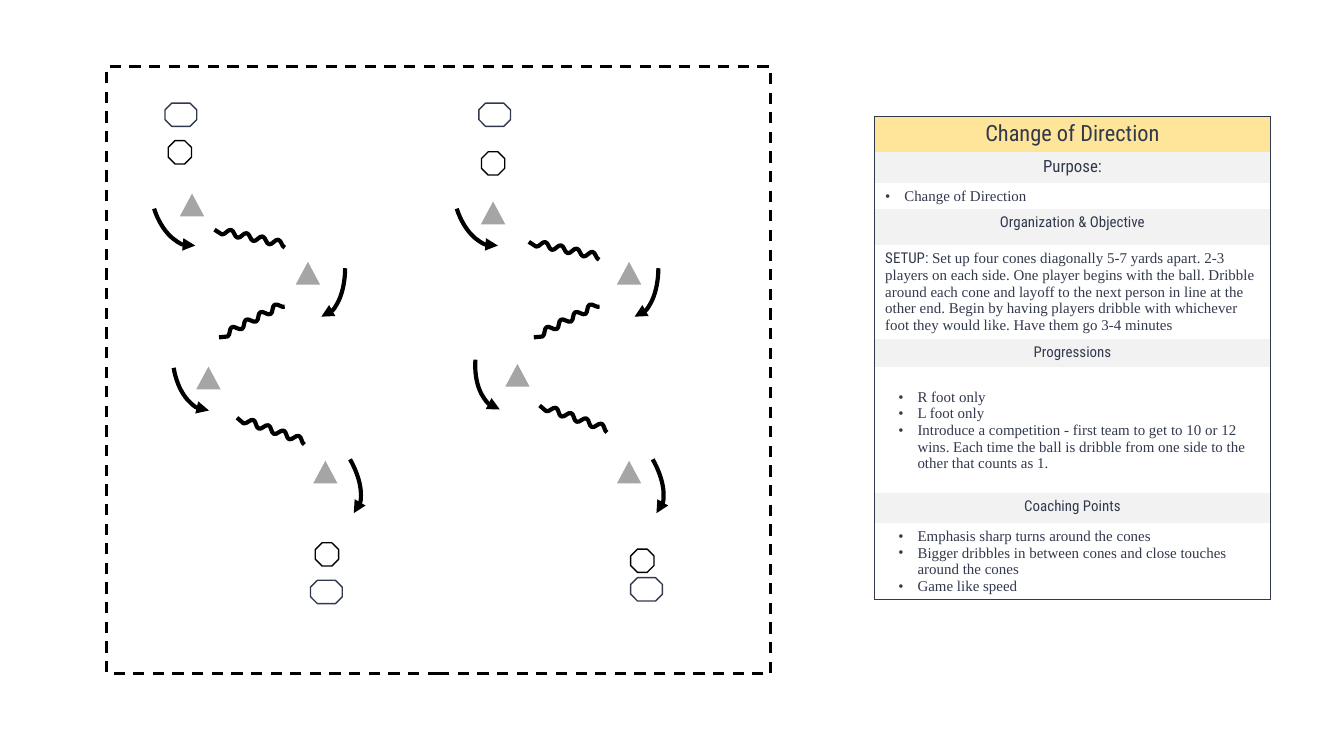
from math import cos, pi

from lxml.etree import SubElement
from pptx import Presentation
from pptx.dml.color import RGBColor
from pptx.enum.dml import MSO_LINE
from pptx.enum.shapes import MSO_SHAPE
from pptx.enum.text import MSO_ANCHOR, PP_ALIGN
from pptx.oxml.ns import qn
from pptx.util import Cm, Pt

BLACK = RGBColor(0x00, 0x00, 0x00)
WHITE = RGBColor(0xFF, 0xFF, 0xFF)
NAVY = RGBColor(0x31, 0x39, 0x4D)
INK = RGBColor(0x32, 0x39, 0x4D)
GRAY = RGBColor(0xA5, 0xA5, 0xA5)
PALE = RGBColor(0xF2, 0xF2, 0xF2)
GOLD = RGBColor(0xFF, 0xE5, 0x99)
HEAD, BODY = "Roboto Condensed", "Times New Roman"

deck = Presentation()
deck.slide_width, deck.slide_height = Cm(25.4), Cm(14.29)
slide = deck.slides.add_slide(deck.slide_layouts[6])
shapes = slide.shapes


def paint(shape, fill, line, width=0.75):
    shape.shadow.inherit = False
    if fill is None:
        shape.fill.background()
    else:
        shape.fill.solid()
        shape.fill.fore_color.rgb = fill
    if line is None:
        shape.line.fill.background()
    else:
        shape.line.color.rgb = line
        shape.line.width = Pt(width)


def place(kind, x, y, w, h, fill, line, width=0.75):
    shape = shapes.add_shape(kind, Cm(x), Cm(y), Cm(w), Cm(h))
    paint(shape, fill, line, width)
    return shape


# Field
field = place(MSO_SHAPE.RECTANGLE, 2.02, 1.26, 12.55, 11.48, None, BLACK, 1.5)
field.line.dash_style = MSO_LINE.DASH

# Session table: kind of row, height, paragraphs
rows = [
    ("title", 0.68, ["Change of Direction"]),
    ("purpose", 0.58, ["Purpose:"]),
    ("first", 0.49, ["Change of Direction"]),
    ("head", 0.68, ["Organization & Objective"]),
    ("text", 1.78, [
        "Set up four cones diagonally 5-7 yards apart. 2-3 players on each "
        "side. One player begins with the ball. Dribble around each cone and "
        "layoff to the next person in line at the other end. Begin by having "
        "players dribble with whichever foot they would like. Have them go "
        "3-4 minutes"]),
    ("head", 0.53, ["Progressions"]),
    ("list", 2.38, [
        "R foot only",
        "L foot only",
        "Introduce a competition - first team to get to 10 or 12 wins. Each "
        "time the ball is dribble from one side to the other that counts as 1."]),
    ("head", 0.57, ["Coaching Points"]),
    ("list", 1.44, [
        "Emphasis sharp turns around the cones",
        "Bigger dribbles in between cones and close touches around the cones",
        "Game like speed"]),
]
sizes = {"title": 12, "purpose": 9}
fills = {"title": GOLD, "purpose": PALE, "head": PALE}
indents = {"first": 0.36, "list": 0.61}
frame = shapes.add_table(len(rows), 1, Cm(16.53), Cm(2.2), Cm(7.48), Cm(9.13))
table = frame.table
table.first_row = table.horz_banding = False

for i, (kind, height, lines) in enumerate(rows):
    table.rows[i].height = Cm(height)
    cell = table.cell(i, 0)
    cell.margin_left = cell.margin_right = Cm(0.2)
    cell.margin_top = cell.margin_bottom = Cm(0.09)
    cell.vertical_anchor = MSO_ANCHOR.TOP
    if lines[0] == "R foot only":
        cell.vertical_anchor = MSO_ANCHOR.MIDDLE

    # Outer border only
    sides = {"L": True, "R": True, "T": i == 0, "B": i == len(rows) - 1}
    for side, shown in sides.items():
        edge = SubElement(cell._tc.get_or_add_tcPr(), qn(f"a:ln{side}"), w=str(Pt(0.75)))
        if shown:
            solid = SubElement(edge, qn("a:solidFill"))
            SubElement(solid, qn("a:srgbClr"), val=str(NAVY))
        else:
            SubElement(edge, qn("a:noFill"))
    cell.fill.solid()
    cell.fill.fore_color.rgb = fills.get(kind, WHITE)

    # Text
    for n, line in enumerate(lines):
        frame = cell.text_frame
        para = frame.paragraphs[0] if n == 0 else frame.add_paragraph()
        if kind in fills:
            para.alignment = PP_ALIGN.CENTER
        if kind in indents:
            props = para._p.get_or_add_pPr()
            props.set("marL", str(Cm(indents[kind])))
            props.set("indent", str(Cm(-0.36)))
            tint = SubElement(props, qn("a:buClr"))
            SubElement(tint, qn("a:srgbClr"), val=str(INK))
            SubElement(props, qn("a:buFont"), typeface=BODY)
            SubElement(props, qn("a:buChar"), char="•")
        runs = [(line, HEAD if kind in fills else BODY)]
        if kind == "text":
            runs.insert(0, ("SETUP: ", HEAD))
        for text, face in runs:
            run = para.add_run()
            run.text = text
            run.font.name = face
            run.font.size = Pt(sizes.get(kind, 8))
            run.font.color.rgb = INK

# Cones
for x, y in [(3.4, 3.66), (9.09, 3.81), (5.59, 4.95), (11.66, 4.95),
             (9.55, 6.88), (3.71, 6.93), (5.92, 8.71), (11.66, 8.71)]:
    place(MSO_SHAPE.ISOSCELES_TRIANGLE, x, y, 0.46, 0.43, GRAY, None)

# Players: narrow ones at the front of the line, wide ones behind
for x, y in [(3.18, 2.66), (9.1, 2.87), (11.92, 10.38), (5.96, 10.26)]:
    place(MSO_SHAPE.OCTAGON, x, y, 0.44, 0.44, WHITE, BLACK)
for x, y in [(3.12, 1.95), (9.05, 1.95), (11.92, 10.92), (5.87, 10.97)]:
    place(MSO_SHAPE.OCTAGON, x, y, 0.6, 0.44, WHITE, NAVY)

# Dribbles: nine curved half waves, the last one ending halfway
for x, y, turn in [(4.04, 4.48, 191.8), (4.44, 8.12, 199.2), (4.06, 6.06, 152.4),
                   (9.98, 4.71, 191.8), (10.01, 6.06, 152.4), (10.16, 7.89, 199.2)]:
    knots = [(Cm(x + 1.37 * k / 9), Cm(y - 0.06 * cos(pi * min(k, 4 + k / 2))))
             for k in range(10)]
    pen = shapes.build_freeform(*knots[0])
    pen.add_line_segments(knots[1:], close=False)
    wave = pen.convert_to_shape()
    paint(wave, None, BLACK, 2.25)
    wave.rotation = turn
    last = None
    for piece in list(wave._element.iter(qn("a:moveTo"), qn("a:lnTo"))):
        spot = piece.find(qn("a:pt"))
        end = int(spot.get("x")), int(spot.get("y"))
        if last:
            reach = int((end[0] - last[0]) * 0.4)
            curve = SubElement(piece.getparent(), qn("a:cubicBezTo"))
            for px, py in [(last[0] + reach, last[1]), (end[0] - reach, end[1]), end]:
                SubElement(curve, qn("a:pt"), x=str(px), y=str(py))
            piece.getparent().remove(piece)
        last = end

# Turns around the cones: left side mirrored
right, left = (2.62, 1.32, 185.31), (2.08, 1.3, 172.98)
for x, y, turn, side in [
        (4.52, 4.04, 79.4, right), (4.52, 8.05, 49.2, right),
        (10.44, 4.04, 79.4, right), (10.24, 8.05, 49.2, right),
        (2.46, 2.97, 259.4, left), (2.87, 6.07, 267.9, left),
        (8.18, 2.97, 259.4, left), (8.61, 6.07, 281.4, left)]:
    w, h, start = side
    arc = place(MSO_SHAPE.ARC, x, y, w, h, None, BLACK, 2.25)
    arc.adjustments[0], arc.adjustments[1] = start, 0
    arc.rotation = turn
    if side is left:
        arc._element.spPr.find(qn("a:xfrm")).set("flipH", "1")
    SubElement(arc.line._get_or_add_ln(), qn("a:tailEnd"), type="triangle")

deck.save("out.pptx")
